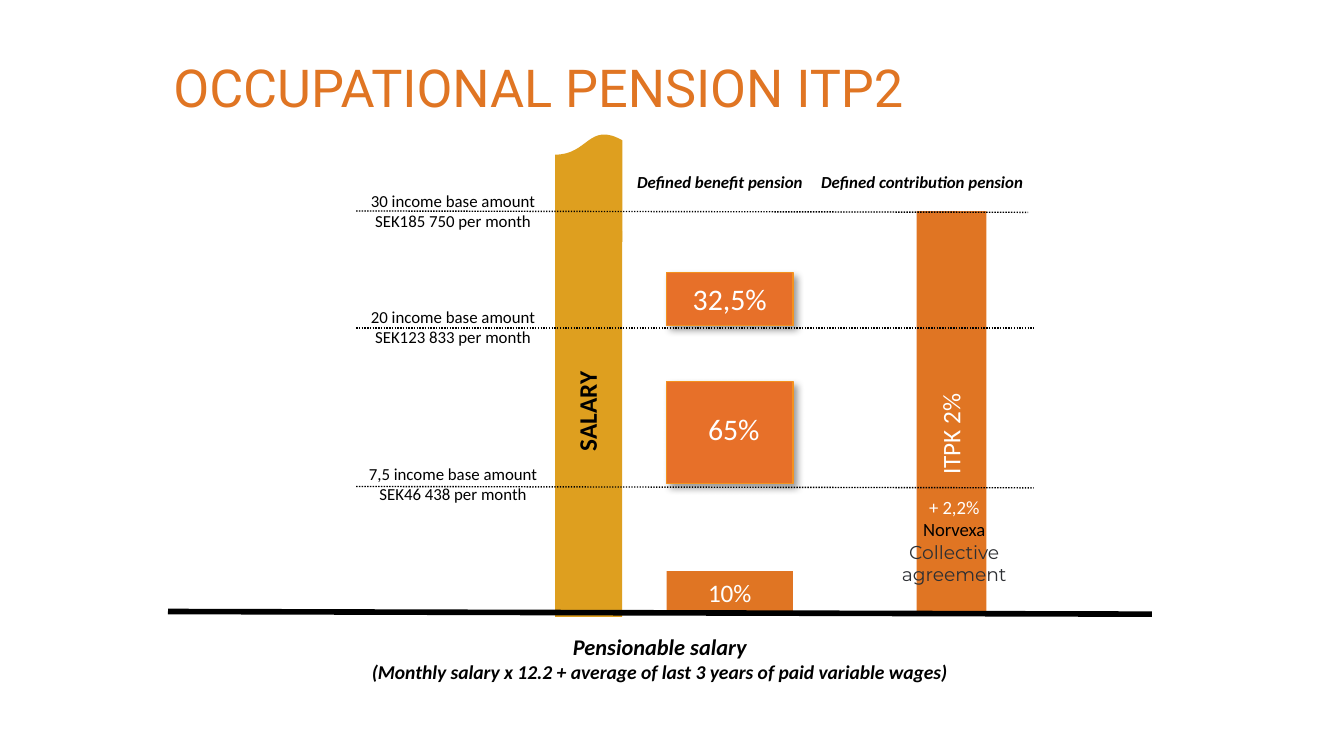
from lxml import etree
from pptx import Presentation
from pptx.dml.color import RGBColor
from pptx.enum.dml import MSO_LINE_DASH_STYLE as DASH
from pptx.enum.shapes import MSO_CONNECTOR, MSO_SHAPE
from pptx.enum.text import MSO_ANCHOR, MSO_AUTO_SIZE, PP_ALIGN
from pptx.oxml.ns import qn
from pptx.util import Inches, Pt

ORANGE, GOLD, WHITE, BLACK = "E07523", "DE9F1F", "FFFFFF", "000000"


def rgb(value):
    return RGBColor.from_string(value)


def write(tf, lines, font="Calibri", size=9, color=BLACK, bold=False, italic=False,
          align=PP_ALIGN.CENTER, anchor=MSO_ANCHOR.TOP, wrap=True, inset=None, breaks=False):
    tf.word_wrap = wrap
    tf.auto_size = MSO_AUTO_SIZE.NONE
    tf.vertical_anchor = anchor
    if inset is not None:
        tf.margin_left = tf.margin_right = Inches(inset)
        tf.margin_top = tf.margin_bottom = Inches(inset)
    p = tf.paragraphs[0]
    for i, line in enumerate(lines):
        text, style = line if isinstance(line, tuple) else (line, {})
        if i and breaks:
            p.add_line_break()
        elif i:
            p = tf.add_paragraph()
        p.alignment = align
        r = p.add_run()
        r.text = text
        r.font.name = style.get("font", font)
        r.font.size = Pt(style.get("size", size))
        r.font.color.rgb = rgb(style.get("color", color))
        r.font.bold, r.font.italic = bold, italic


def add_text(s, box, lines, rotation=0, **fmt):
    sp = s.shapes.add_textbox(*map(Inches, box))
    sp.rotation = rotation
    write(sp.text_frame, lines, **fmt)


def add_block(s, box, fill, kind=MSO_SHAPE.RECTANGLE, rotation=0, label=None):
    sp = s.shapes.add_shape(kind, *map(Inches, box))
    sp.rotation = rotation
    sp.shadow.inherit = False
    sp.fill.solid()
    sp.fill.fore_color.rgb = rgb(fill)
    sp.line.fill.background()
    if label:
        write(sp.text_frame, [label], size=13.5, color=WHITE,
              anchor=MSO_ANCHOR.MIDDLE, wrap=False, inset=0)
    return sp


def add_raised_block(s, box):
    sp = add_block(s, box, "E77029")
    sp.line.color.rgb = rgb("F4911E")
    sp.line.width = Pt(0.75)
    effects = sp._element.spPr.find(qn("a:effectLst"))
    shadow = etree.SubElement(effects, qn("a:outerShdw"), blurRad=str(Pt(4)),
                              dist=str(Pt(3)), dir="2700000", rotWithShape="0")
    color = etree.SubElement(shadow, qn("a:srgbClr"), val=BLACK)
    etree.SubElement(color, qn("a:alpha"), val="40000")


def add_line(s, x1, y1, x2, y2, width=0.75, dash=None):
    c = s.shapes.add_connector(MSO_CONNECTOR.STRAIGHT, *map(Inches, (x1, y1, x2, y2)))
    c.line.color.rgb = rgb(BLACK)
    c.line.width = Pt(width)
    if dash:
        c.line.dash_style = dash
    etree.SubElement(c._element.spPr, qn("a:effectLst"))


def add_title(s, text):
    sp = s.shapes.title
    sp.left, sp.top, sp.width, sp.height = map(Inches, (1.19, 0.44, 7.5, 0.57))
    write(sp.text_frame, [text], font="Roboto", size=28, color=ORANGE, align=PP_ALIGN.LEFT)
    sp.text_frame.paragraphs[0].line_spacing = 0.83


def add_bars(s):
    add_block(s, (4.13, 0.99, 0.5, 0.81), GOLD, MSO_SHAPE.FLOWCHART_DOCUMENT, 180)
    add_block(s, (4.13, 1.72, 0.5, 2.87), GOLD)
    add_block(s, (6.82, 1.57, 0.52, 2.99), ORANGE)
    add_block(s, (4.96, 4.25, 0.94, 0.32), ORANGE, label="10%")


def add_levels(s):
    levels = [
        (1.42, 1.57, 1.58, 7.65, "30 income base amount", "SEK185 750 per month"),
        (2.28, 2.44, 2.44, 7.69, "20 income base amount", "SEK123 833 per month"),
        (3.45, 3.62, 3.63, 7.69, "7,5 income base amount", "SEK46 438 per month"),
    ]
    for top, y1, y2, right, amount, salary in levels:
        add_line(s, 2.65, y1, right, y2, dash=DASH.ROUND_DOT)
        add_text(s, (2.57, top, 1.6, 0.3), [amount, salary], inset=0, breaks=True)
    add_line(s, 1.25, 4.55, 8.57, 4.57, width=3)


def add_benefits(s):
    add_raised_block(s, (4.96, 2.84, 0.94, 0.76))
    add_raised_block(s, (4.96, 2.03, 0.94, 0.39))
    for left, top, text in [(4.91, 3.01, "65%"), (4.88, 2.04, "32,5%")]:
        add_text(s, (left, top, 1.1, 0.55), [text], size=16, color=WHITE)


def add_labels(s):
    for left, text in [(4.74, "Defined benefit pension"), (6.11, "Defined contribution pension")]:
        add_text(s, (left, 1.28, 1.6, 0.16), [text], bold=True, italic=True,
                 align=PP_ALIGN.LEFT, wrap=False, inset=0)
    add_text(s, (3.95, 2.85, 0.86, 0.35), ["SALARY"], rotation=270, size=13.5,
             bold=True, align=PP_ALIGN.LEFT, wrap=False)
    add_text(s, (6.45, 2.82, 1.27, 0.35), ["ITPK 2%"], rotation=270, size=13.5,
             color=WHITE, align=PP_ALIGN.LEFT)
    agreement = {"font": "Montserrat", "color": "2D2F33"}
    add_text(s, (4.58, 3.64, 5.04, 0.77),
             [("+ 2,2%", {"color": WHITE}), "Norvexa",
              ("Collective", agreement), ("agreement", agreement)], size=10)
    add_text(s, (1.25, 4.66, 7.32, 0.45),
             [("Pensionable salary", {"size": 12}),
              "(Monthly salary x 12.2 + average of last 3 years of paid variable wages)"],
             size=10.5, bold=True, italic=True, breaks=True)


def main():
    prs = Presentation()
    prs.slide_width = Inches(10)
    prs.slide_height = prs.slide_width * 9 // 16
    s = prs.slides.add_slide(prs.slide_layouts[5])
    add_title(s, "OCCUPATIONAL PENSION ITP2")
    add_bars(s)
    add_levels(s)
    add_benefits(s)
    add_labels(s)
    prs.save("out.pptx")


if __name__ == "__main__":
    main()
